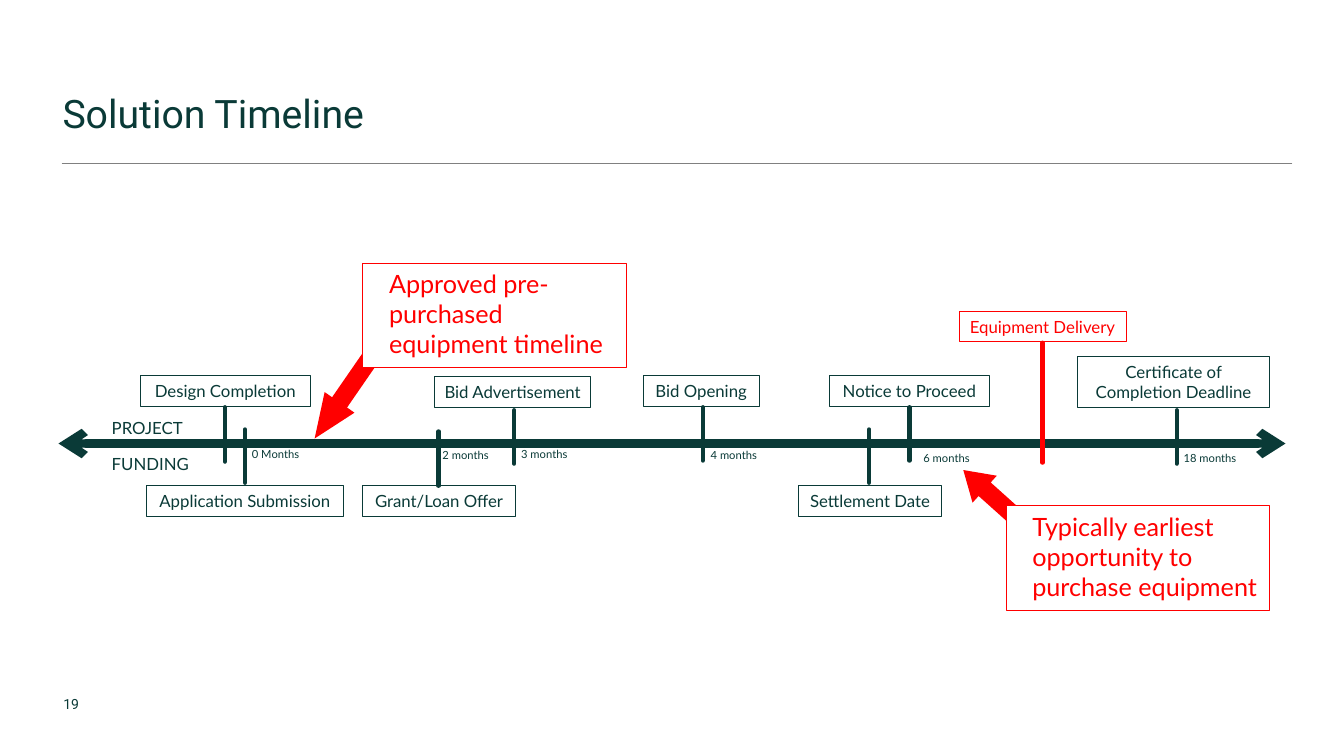
import pptx
import pptx.util
import pptx.dml.color
import pptx.enum.shapes
import pptx.enum.text
import pptx.oxml


class Theme:
    dark = pptx.dml.color.RGBColor.from_string("0A3A37")
    red = pptx.dml.color.RGBColor.from_string("FF0000")
    white = pptx.dml.color.RGBColor.from_string("FFFFFF")
    grey = pptx.dml.color.RGBColor.from_string("808080")
    head = "Roboto"
    body = "Lato"
    title = 28
    call = 18
    label = 12
    page = 10
    month = 8


px = pptx.util.Inches(1) // 100
Shape = pptx.enum.shapes.MSO_SHAPE
Align = pptx.enum.text.PP_ALIGN
Anchor = pptx.enum.text.MSO_ANCHOR

deck = pptx.Presentation()
deck.slide_width = 1333 * px
deck.slide_height = 750 * px
slide = deck.slides.add_slide(deck.slide_layouts[5])
shapes = slide.shapes


def put(place, words, size, ink=Theme.dark, edge=None, fill=None,
        align=Align.LEFT, wrap=True, font=Theme.body):
    spot = [n * px for n in place]
    if edge is None:
        box = shapes.add_textbox(*spot)
    else:
        box = shapes.add_shape(Shape.RECTANGLE, *spot)
        box.shadow.inherit = False
        box.line.color.rgb = edge
        box.line.width = pptx.util.Pt(0.75)
        box.fill.background()
    if fill is not None:
        box.fill.solid()
        box.fill.fore_color.rgb = fill
    if words:
        frame = box.text_frame
        frame.word_wrap = wrap
        frame.vertical_anchor = Anchor.TOP
        para = frame.paragraphs[0]
        para.alignment = align
        run = para.add_run()
        run.text = words
        run.font.size = pptx.util.Pt(size)
        run.font.name = font
        run.font.color.rgb = ink


def draw(start, end, ink, width, tips=()):
    line = shapes.add_connector(
        pptx.enum.shapes.MSO_CONNECTOR.STRAIGHT,
        *[n * px for n in start + end])
    line.line.color.rgb = ink
    line.line.width = pptx.util.Pt(width)
    props = line.line._get_or_add_ln()
    props.set("cap", "rnd")
    for tip in tips:
        pptx.oxml.ns
        node = props.makeelement(pptx.oxml.ns.qn("a:" + tip), {"type": "arrow"})
        props.append(node)
    root = line._element.spPr
    root.append(root.makeelement(pptx.oxml.ns.qn("a:effectLst"), {}))


title = shapes.title
title.left, title.top, title.width, title.height = [
    n * px for n in (62, 53, 1219, 87)]
frame = title.text_frame
frame.auto_size = pptx.enum.text.MSO_AUTO_SIZE.NONE
frame.word_wrap = True
frame.vertical_anchor = Anchor.BOTTOM
frame.margin_left = 0
frame.margin_right = 10 * px
frame.margin_top = frame.margin_bottom = 5 * px
para = frame.paragraphs[0]
para.alignment = Align.LEFT
para.line_spacing = pptx.util.Pt(30)
run = para.add_run()
run.text = "Solution Timeline"
run.font.size = pptx.util.Pt(Theme.title)
run.font.name = Theme.head
run.font.color.rgb = Theme.dark

put((53, 685, 52, 27), "19", Theme.page, font=Theme.head)
draw((62, 162), (1281, 162), Theme.grey, 0.75)
draw((58, 440), (1275, 440), Theme.dark, 6, ("headEnd", "tailEnd"))

for top, words in ((410, "PROJECT"), (445, "FUNDING")):
    put((101, top, 142, 30), words, Theme.label)

events = (
    (139, 373, 169, 30, "Design Completion", 223, 458, 404),
    (145, 482, 196, 30, "Application Submission", 243, 479, 426),
    (360, 482, 151, 30, "Grant/Loan Offer", 435, 482, 428),
    (431, 374, 155, 30, "Bid Advertisement", 510, 460, 407),
    (638, 373, 115, 30, "Bid Opening", 697, 457, 404),
    (792, 482, 142, 30, "Settlement Date", 862, 479, 426),
    (823, 373, 158, 30, "Notice to Proceed", 902, 457, 404),
    (1069, 354, 190, 50, "Certificate of Completion Deadline", 1167, 460, 407),
)
for left, top, wide, high, words, mid, low, peak in events:
    put((left, top, wide, high), words, Theme.label, edge=Theme.dark,
        align=Align.CENTER)
    draw((mid, low), (mid, peak), Theme.dark, 3)

calls = (
    ((946, 473, 74, 36), 221.9, 0.79, (998, 502), 261,
     "Typically earliest opportunity to purchase equipment"),
    ((290, 375, 102, 36), 124.6, 1.21, (360, 261), 245,
     "Approved pre-purchased equipment timeline"),
)
for place, turn, tip, (left, top), wide, words in calls:
    arrow = shapes.add_shape(Shape.RIGHT_ARROW, *[n * px for n in place])
    arrow.shadow.inherit = False
    arrow.rotation = turn
    arrow.adjustments[0] = 0.5
    arrow.adjustments[1] = tip
    arrow.fill.solid()
    arrow.fill.fore_color.rgb = Theme.red
    arrow.line.fill.background()
    put((left, top, 261, 104), "", Theme.call, edge=Theme.red, fill=Theme.white)
    put((left + 16, top, wide, 101), words, Theme.call, Theme.red)

months = (
    (240, 439, 67, "0 Months"),
    (429, 440, 67, "2 months"),
    (507, 439, 67, "3 months"),
    (695, 440, 67, "4 months"),
    (906, 443, 67, "6 months"),
    (1164, 443, 73, "18 months"),
)
for left, top, wide, words in months:
    put((left, top, wide, 24), words, Theme.month, wrap=False)

draw((1034, 459), (1034, 340), Theme.red, 3)
put((952, 309, 165, 30), "Equipment Delivery", Theme.label, Theme.red,
    edge=Theme.red, wrap=False)

deck.save("out.pptx")
